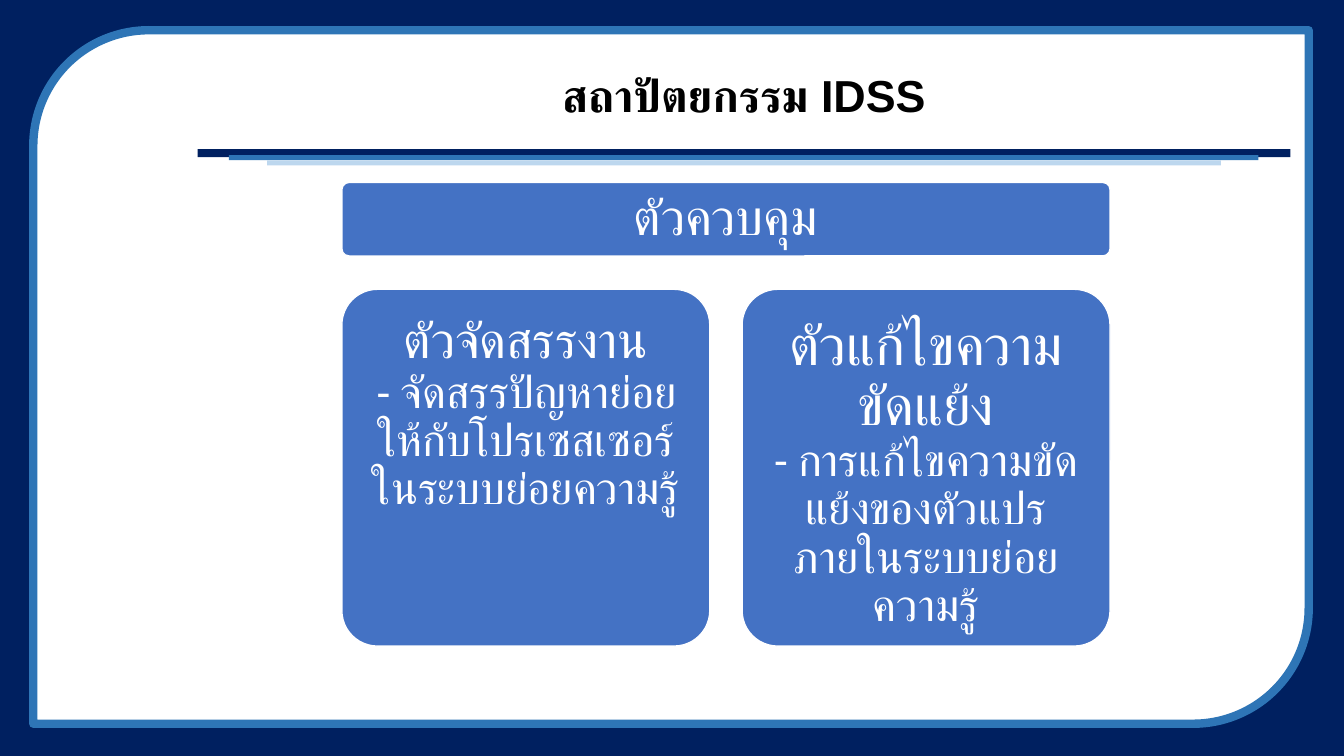
import dataclasses
import pptx
import pptx.util
import pptx.dml.color
import pptx.enum.dml
import pptx.enum.lang
import pptx.enum.shapes
import pptx.enum.text

Inches = pptx.util.Inches
Kind = pptx.enum.shapes.MSO_SHAPE
Anchor = pptx.enum.text.MSO_ANCHOR


@dataclasses.dataclass(frozen=True)
class Theme:
    navy: str = "002060"
    blue: str = "2E75B6"
    pale: str = "BDD7EE"
    card: str = "4472C4"
    white: str = "FFFFFF"
    black: str = "000000"
    head: str = "Arial"
    body: str = "Calibri"
    small: int = 32
    mid: int = 36
    large: int = 40


THEME = Theme()


def color(code):
    return pptx.dml.color.RGBColor.from_string(code)


def block(slide, kind, box, fill, line=None, width=1):
    """Add a flat shape; box is left, top, width, height in inches."""
    shape = slide.shapes.add_shape(kind, *map(Inches, box))
    shape.shadow.inherit = False
    shape.fill.solid()
    shape.fill.fore_color.rgb = color(fill)
    if line:
        shape.line.color.rgb = color(line)
        shape.line.width = pptx.util.Pt(width)
    else:
        shape.line.fill.background()
    return shape


def write(frame, runs, font, ink, bold=False, anchor=Anchor.MIDDLE):
    """Fill one centred paragraph with (text, size) runs, one below another."""
    frame.word_wrap = True
    frame.auto_size = pptx.enum.text.MSO_AUTO_SIZE.NONE
    frame.vertical_anchor = anchor
    para = frame.paragraphs[0]
    para.alignment = pptx.enum.text.PP_ALIGN.CENTER
    para.line_spacing = 0.9
    for index, (text, size) in enumerate(runs):
        if index:
            para.add_line_break()
        run = para.add_run()
        run.text = text
        run.font.size = pptx.util.Pt(size)
        run.font.name = font
        run.font.bold = bold
        run.font.color.rgb = color(ink)
        run.font.language_id = pptx.enum.lang.MSO_LANGUAGE_ID.THAI


def frame_page(slide, box):
    left, top, width, height = box
    block(slide, Kind.RECTANGLE, box, THEME.navy)
    inner = (left + 0.33, top + 0.3, width - 0.68, height - 0.62)
    block(slide, Kind.ROUND_2_DIAG_RECTANGLE, inner, THEME.white, THEME.blue, 6)


def header(slide, box, text):
    """Place the title with three stepped rules under it."""
    left, top, width, height = box
    title = slide.shapes.title
    title.left, title.top, title.width, title.height = map(Inches, box)
    slide.shapes.element.append(title.element)  # bring to front
    write(title.text_frame, [(text, THEME.small)], THEME.head, THEME.black, True)
    rules = [
        (0, 0.02, 10.84, 0.08, THEME.navy),
        (0.31, 0.08, 10.21, 0.05, THEME.blue),
        (0.69, 0.13, 9.46, 0.05, THEME.pale),
    ]
    for shift, drop, wide, thick, fill in rules:
        spot = (left + shift, top + height + drop, wide, thick)
        block(slide, Kind.RECTANGLE, spot, fill)


def card(slide, box, runs, inset=0.15, anchor=Anchor.TOP):
    shape = block(slide, Kind.ROUNDED_RECTANGLE, box, THEME.card, THEME.white)
    shape.adjustments[0] = 0.1
    frame = shape.text_frame
    frame.margin_left = frame.margin_right = Inches(inset)
    frame.margin_top = frame.margin_bottom = Inches(inset)
    write(frame, runs, THEME.body, THEME.white, anchor=anchor)


def diagram(slide, box, lead, parts):
    """Place a lead bar over a row of equal cards."""
    left, top, width, height = box
    bar, drop, gap = 0.73, 1.06, 0.32
    card(slide, (left, top, width, bar), [(lead, THEME.mid)], anchor=Anchor.MIDDLE)
    wide = (width - gap * (len(parts) - 1)) / len(parts)
    for index, (name, size, note, inset) in enumerate(parts):
        spot = (left + index * (wide + gap), top + drop, wide, height - drop)
        card(slide, spot, [(name, size), (note, THEME.small)], inset)


def main():
    deck = pptx.Presentation()
    deck.slide_width, deck.slide_height = Inches(13.33), Inches(7.5)
    slide = deck.slides.add_slide(deck.slide_layouts.get_by_name("Title Only"))
    frame_page(slide, (0, 0, 13.33, 7.5))
    header(slide, (1.96, 0.49, 10.84, 0.97), "สถาปัตยกรรม IDSS")
    parts = [
        ("ตัวจัดสรรงาน", THEME.mid,
         "- จัดสรรปัญหาย่อยให้กับโปรเซสเซอร์ในระบบย่อยความรู้", 0.15),
        ("ตัวแก้ไขความขัดแย้ง", THEME.large,
         "- การแก้ไขความขัดแย้งของตัวแปรภายในระบบย่อยความรู้", 0.17),
    ]
    diagram(slide, (3.39, 1.81, 7.62, 4.6), "ตัวควบคุม", parts)
    deck.save("out.pptx")


if __name__ == "__main__":
    main()
